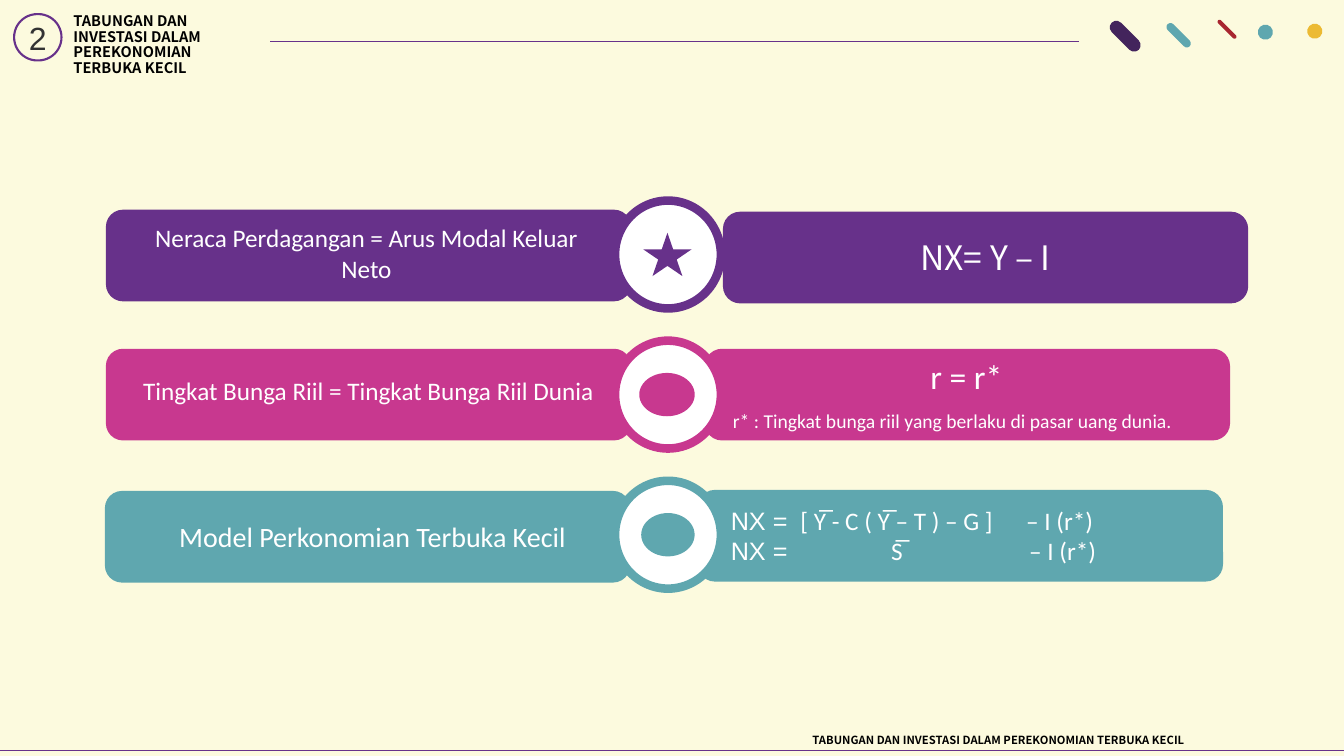
from lxml.etree import SubElement
from pptx import Presentation
from pptx.dml.color import RGBColor
from pptx.enum.shapes import MSO_CONNECTOR, MSO_SHAPE
from pptx.enum.text import MSO_ANCHOR, PP_ALIGN
from pptx.oxml.ns import qn
from pptx.util import Inches, Pt

PURPLE, PINK, TEAL = "67318A", "C8388F", "5FA7AF"
WHITE, BLACK = "FFFFFF", "000000"
HEADING_FONT = "Noto Sans CJK SC"
TOPIC = "TABUNGAN DAN INVESTASI DALAM PEREKONOMIAN TERBUKA KECIL"
BAR_SIZE = (5.21, 0.91)
BADGE_LEFT, BADGE_TOP, BADGE_STEP, BADGE_SIZE = 6.1, 1.99, 1.39, (1.05, 1.07)


def rgb(color):
    """Return the colour of a hex string."""
    return RGBColor.from_string(color)


def add_shape(slide, kind, box, fill=None, line=None, line_width=1, corner=None, rotation=0):
    """Add a preset shape without shadow."""
    shape = slide.shapes.add_shape(kind, *map(Inches, box))
    shape.shadow.inherit = False
    shape.rotation = rotation
    if corner is not None:
        shape.adjustments[0] = corner
    if fill:
        shape.fill.solid()
        shape.fill.fore_color.rgb = rgb(fill)
    else:
        shape.fill.background()
    if line:
        shape.line.color.rgb = rgb(line)
        shape.line.width = Pt(line_width)
    else:
        shape.line.fill.background()
    return shape


def add_bar(slide, left, top, color):
    """Add one coloured bar with rounded corners."""
    return add_shape(slide, MSO_SHAPE.ROUNDED_RECTANGLE, (left, top, *BAR_SIZE), fill=color, corner=0.187)


def add_frame(slide, box, anchor=MSO_ANCHOR.TOP):
    """Add a wrapping text box and return its text frame."""
    frame = slide.shapes.add_textbox(*map(Inches, box)).text_frame
    frame.word_wrap = True
    frame.vertical_anchor = anchor
    return frame


def add_rule(slide, start, end, top):
    """Add a thin horizontal line."""
    rule = slide.shapes.add_connector(
        MSO_CONNECTOR.STRAIGHT, Inches(start), Inches(top), Inches(end), Inches(top))
    rule.line.color.rgb = rgb(PURPLE)
    rule.line.width = Pt(0.5)
    SubElement(rule._element.spPr, qn("a:effectLst"))


def write_text(frame, text, size=18, font="Calibri", color=WHITE, bold=False,
               align=PP_ALIGN.LEFT, line_spacing=None, space_before=None, paragraph=None):
    """Write a formatted run in a new or a given paragraph and return the paragraph."""
    if paragraph is None:
        first = frame.paragraphs[0]
        paragraph = frame.add_paragraph() if first.runs else first
        paragraph.alignment = align
        paragraph.line_spacing = line_spacing
        if space_before is not None:
            paragraph.space_before = Pt(space_before)
    run = paragraph.add_run()
    run.text = text
    run.font.size = Pt(size)
    run.font.name = font
    run.font.bold = bold
    run.font.color.rgb = rgb(color)
    return paragraph


def add_tab_stops(paragraph, stops):
    """Give a paragraph left tab stops, in inches."""
    tab_list = SubElement(paragraph._p.get_or_add_pPr(), qn("a:tabLst"))
    for stop in stops:
        SubElement(tab_list, qn("a:tab"), pos=str(Inches(stop)), algn="l")


def add_header(slide):
    """Add the number, the title, the rule and the confetti."""
    title = add_frame(slide, (0.63, 0.04, 2.04, 0.82), MSO_ANCHOR.MIDDLE)
    write_text(title, TOPIC, size=10.4, font=HEADING_FONT, color=BLACK, bold=True, line_spacing=0.9)
    add_shape(slide, MSO_SHAPE.ROUNDED_RECTANGLE, (0.14, 0.14, 0.47, 0.46),
              line=PURPLE, line_width=1.5, corner=0.5)
    number = add_frame(slide, (0.11, 0.12, 0.53, 0.55), MSO_ANCHOR.MIDDLE)
    write_text(number, "2", size=22.9, font="Arial", color="333333",
               align=PP_ALIGN.CENTER, line_spacing=0.9)
    add_rule(slide, 2.68, 10.7, 0.41)
    confetti = [
        (11.16, 0.36, 0.38, 0.13, "43245C"),
        (11.69, 0.35, 0.31, 0.08, TEAL),
        (12.17, 0.29, 0.25, 0.04, "A82630"),
        (12.55, 0.32, 0.15, 0.15, TEAL),
        (13.04, 0.31, 0.15, 0.15, "ECBA33"),
    ]
    for center_x, center_y, length, width, color in confetti:
        box = (center_x - length / 2, center_y - width / 2, length, width)
        add_shape(slide, MSO_SHAPE.ROUNDED_RECTANGLE, box, fill=color, corner=0.5, rotation=45)


def add_footer(slide):
    """Add the bottom rule and the running title."""
    add_rule(slide, 0, 13.33, 7.44)
    footer = add_frame(slide, (7.96, 7.23, 5.38, 0.35))
    write_text(footer, TOPIC, size=8, font=HEADING_FONT, color=BLACK, bold=True)


def add_formulas(slide, bars):
    """Write the formulas on the right-hand bars."""
    trade_bar = bars[0].text_frame
    trade_bar.vertical_anchor = MSO_ANCHOR.MIDDLE
    write_text(trade_bar, "NX= Y – I", size=24, font=HEADING_FONT, align=PP_ALIGN.CENTER)

    interest = add_frame(slide, (7.17, 3.53, 4.83, 1.12))
    write_text(interest, "r = r*", size=24, align=PP_ALIGN.CENTER, line_spacing=0.9, space_before=10)
    write_text(interest, "r* : Tingkat bunga riil yang berlaku di pasar uang dunia.",
               size=14, line_spacing=0.9, space_before=10)

    model = add_frame(slide, (7.15, 4.96, 4.83, 0.71))
    equations = [
        ("\t[ Y̅ - C ( Y̅ – T ) – G ]\t– I (r*)", (0.69, 2.93)),
        ("\tS̅\t– I (r*)", (1.59, 2.96)),
    ]
    for equation, stops in equations:
        paragraph = write_text(model, "NX =", font="Arial")
        write_text(model, equation, paragraph=paragraph)
        add_tab_stops(paragraph, stops)


def main():
    """Build the slide and save it."""
    presentation = Presentation()
    presentation.slide_width, presentation.slide_height = Inches(13.33), Inches(7.5)
    slide = presentation.slides.add_slide(presentation.slide_layouts[6])
    slide.background.fill.solid()
    slide.background.fill.fore_color.rgb = rgb("FCFADE")
    add_header(slide)
    add_footer(slide)

    rows = [
        (PURPLE, (1.05, 2.08), (7.17, 2.1), "Neraca Perdagangan = Arus Modal Keluar Neto", 18,
         (1.22, 2.16, 4.83, 0.71), MSO_SHAPE.STAR_5_POINT, (6.38, 2.31, 0.48, 0.43)),
        (PINK, (1.05, 3.46), (6.99, 3.46), "Tingkat Bunga Riil = Tingkat Bunga Riil Dunia", 18,
         (1.24, 3.67, 4.83, 0.4), MSO_SHAPE.OVAL, (6.34, 3.7, 0.55, 0.43)),
        (TEAL, (1.04, 4.87), (6.92, 4.86), "Model Perkonomian Terbuka Kecil", 20,
         (1.28, 5.1, 4.83, 0.44), MSO_SHAPE.OVAL, (6.36, 5.09, 0.53, 0.43)),
    ]
    formula_bars = []
    for index, (color, left_bar, right_bar, label, size, label_box, icon, icon_box) in enumerate(rows):
        add_bar(slide, *left_bar, color)
        write_text(add_frame(slide, label_box), label, size=size, align=PP_ALIGN.CENTER)
        formula_bars.append(add_bar(slide, *right_bar, color))
        badge_box = (BADGE_LEFT, BADGE_TOP + index * BADGE_STEP, *BADGE_SIZE)
        add_shape(slide, MSO_SHAPE.OVAL, badge_box, fill=WHITE, line=color, line_width=6.13)
        add_shape(slide, icon, icon_box, fill=color)
    add_formulas(slide, formula_bars)
    presentation.save("out.pptx")


if __name__ == "__main__":
    main()
